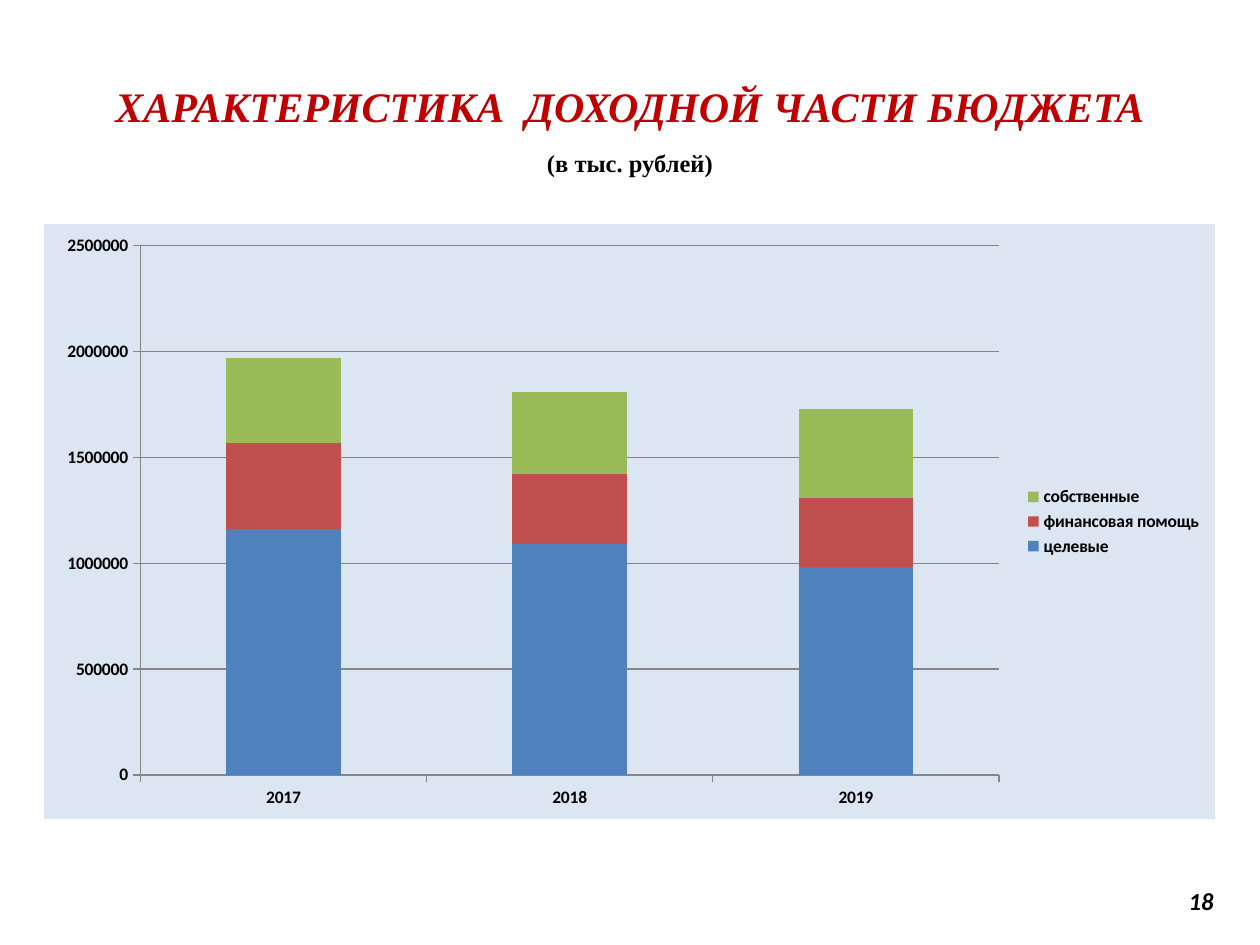
from dataclasses import dataclass

from lxml.etree import SubElement
from pptx import Presentation
from pptx.chart.data import CategoryChartData
from pptx.dml.color import RGBColor
from pptx.enum.chart import XL_CHART_TYPE as ChartType
from pptx.enum.chart import XL_LEGEND_POSITION as LegendPosition
from pptx.enum.chart import XL_TICK_MARK as TickMark
from pptx.enum.text import MSO_ANCHOR as Anchor
from pptx.enum.text import MSO_AUTO_SIZE as AutoSize
from pptx.enum.text import PP_ALIGN as Align
from pptx.oxml.ns import qn
from pptx.util import Emu, Pt

PX_PER_INCH = 126
TITLE_ONLY = 5


@dataclass(frozen=True)
class Theme:
    heading_font: str = "Times New Roman"
    body_font: str = "Calibri"
    accent: str = "C00000"
    ink: str = "000000"
    panel: str = "DCE6F2"
    grid: str = "868686"
    title_size: int = 24
    note_size: int = 14
    chart_size: int = 10


THEME = Theme()

YEARS = ["2017", "2018", "2019"]
INCOME = [
    ("целевые", (1160000, 1090000, 980000), "4F81BD"),
    ("финансовая помощь", (410000, 330000, 330000), "C0504D"),
    ("собственные", (400000, 390000, 420000), "9BBB59"),
]


def px(length):
    return Emu(round(length * 914400 / PX_PER_INCH))


def box(*lengths):
    return [px(length) for length in lengths]


def format_font(font, *, name=THEME.body_font, size=THEME.note_size,
                color=THEME.ink, bold=True, italic=False):
    font.name, font.size = name, Pt(size)
    font.bold, font.italic = bold, italic
    font.color.rgb = RGBColor.from_string(color)


def write_text(paragraph, text, *, align=Align.CENTER, before=0, **style):
    paragraph.alignment = align
    paragraph.space_before = Pt(before)
    run = paragraph.add_run()
    run.text = text
    format_font(run.font, **style)


def add_title(slide, title, note):
    shape = slide.shapes.title
    shape.left, shape.top, shape.width, shape.height = box(0, 10, 1260, 174)
    frame = shape.text_frame
    frame.word_wrap = True
    frame.auto_size = AutoSize.NONE
    frame.vertical_anchor = Anchor.BOTTOM
    write_text(frame.paragraphs[0], title, name=THEME.heading_font,
               size=THEME.title_size, color=THEME.accent, italic=True)
    write_text(frame.add_paragraph(), note, before=10, name=THEME.heading_font)


def add_page_number(slide, number):
    frame = slide.shapes.add_textbox(*box(903, 876, 323, 50)).text_frame
    frame.word_wrap = True
    frame.vertical_anchor = Anchor.MIDDLE
    write_text(frame.paragraphs[0], number, align=Align.RIGHT, italic=True)


def fill_properties(color):
    """Return a factory that adds a solid, unlined c:spPr to a chart part."""
    def add_to(parent):
        properties = SubElement(parent, qn("c:spPr"))
        fill = SubElement(properties, qn("a:solidFill"))
        SubElement(fill, qn("a:srgbClr"), val=color)
        line = SubElement(properties, qn("a:ln"))
        SubElement(line, qn("a:noFill"))
        return properties
    return add_to


def format_axis(axis):
    axis.major_tick_mark = TickMark.OUTSIDE
    axis.minor_tick_mark = TickMark.NONE
    axis.format.line.color.rgb = RGBColor.from_string(THEME.grid)
    format_font(axis.tick_labels.font, size=THEME.chart_size)


def add_income_chart(slide):
    data = CategoryChartData(number_format="General")
    data.categories = YEARS
    for name, values, _ in INCOME:
        data.add_series(name, values)
    chart = slide.shapes.add_chart(
        ChartType.COLUMN_STACKED, *box(44, 224, 1171, 595), data).chart
    chart.has_title = False
    format_font(chart.font, size=THEME.chart_size)

    # Columns
    plot = chart.plots[0]
    plot.gap_width, plot.overlap = 150, 100
    plot.vary_by_categories = False
    for series, (_, _, color) in zip(plot.series, INCOME):
        series.format.fill.solid()
        series.format.fill.fore_color.rgb = RGBColor.from_string(color)

    # Axes and gridlines
    format_axis(chart.category_axis)
    values = chart.value_axis
    format_axis(values)
    values.minimum_scale, values.maximum_scale = 0, 2500000
    values.major_unit = 500000
    values.has_major_gridlines = True
    values.major_gridlines.format.line.color.rgb = RGBColor.from_string(THEME.grid)

    # Legend
    chart.has_legend = True
    chart.legend.position = LegendPosition.RIGHT
    chart.legend.include_in_layout = False
    format_font(chart.legend.font, size=THEME.chart_size)

    # Panel behind the chart and its plot area
    add_fill = fill_properties(THEME.panel)
    chart_space = chart.element
    chart_part = chart_space.find(qn("c:chart"))
    add_fill(chart_part.find(qn("c:plotArea")))
    chart_part.addnext(add_fill(chart_space))


def main():
    presentation = Presentation()
    presentation.slide_width, presentation.slide_height = box(1260, 945)
    slide = presentation.slides.add_slide(presentation.slide_layouts[TITLE_ONLY])
    add_title(slide, "ХАРАКТЕРИСТИКА  ДОХОДНОЙ ЧАСТИ БЮДЖЕТА", "(в тыс. рублей)")
    add_income_chart(slide)
    add_page_number(slide, "18")
    presentation.save("out.pptx")


if __name__ == "__main__":
    main()
